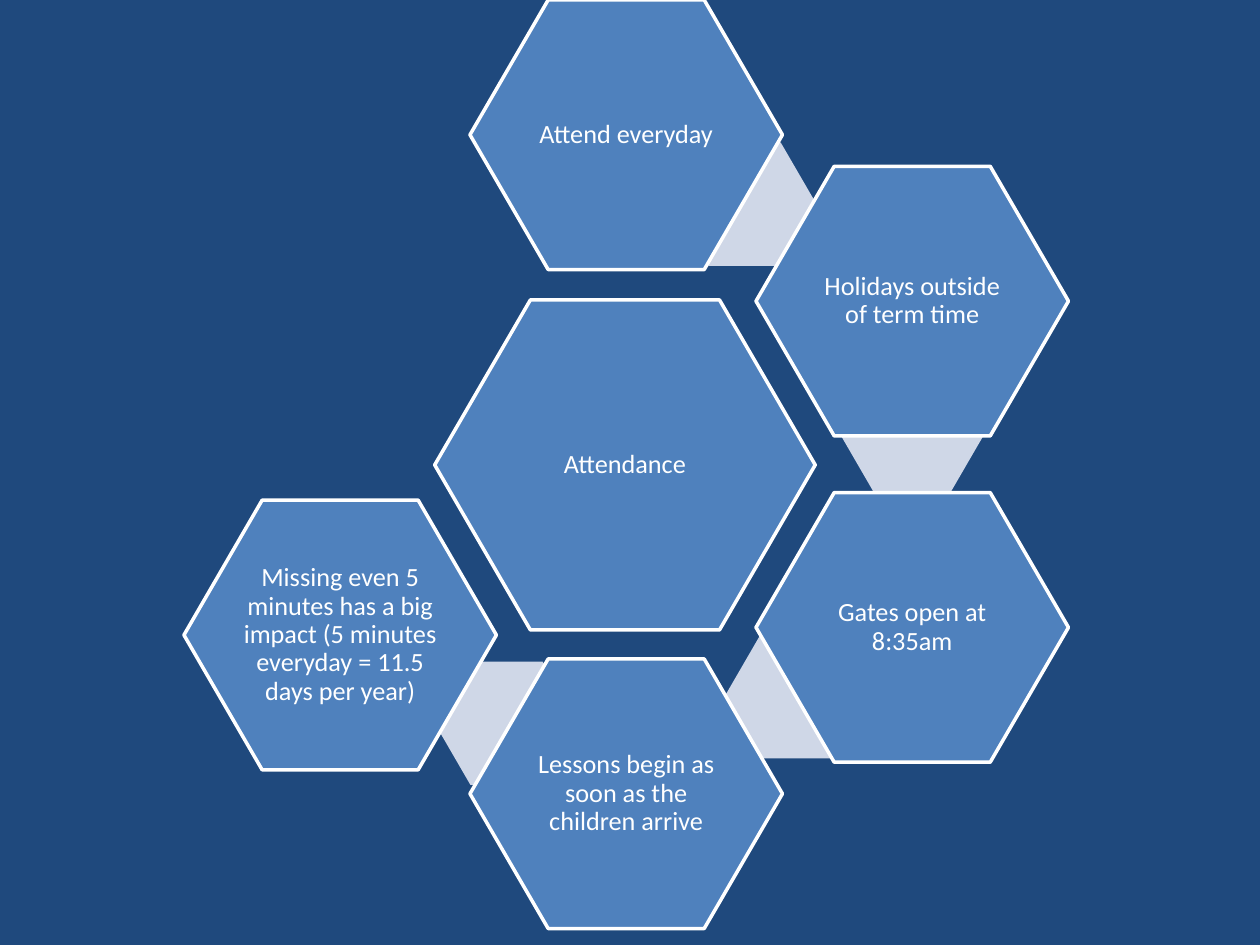
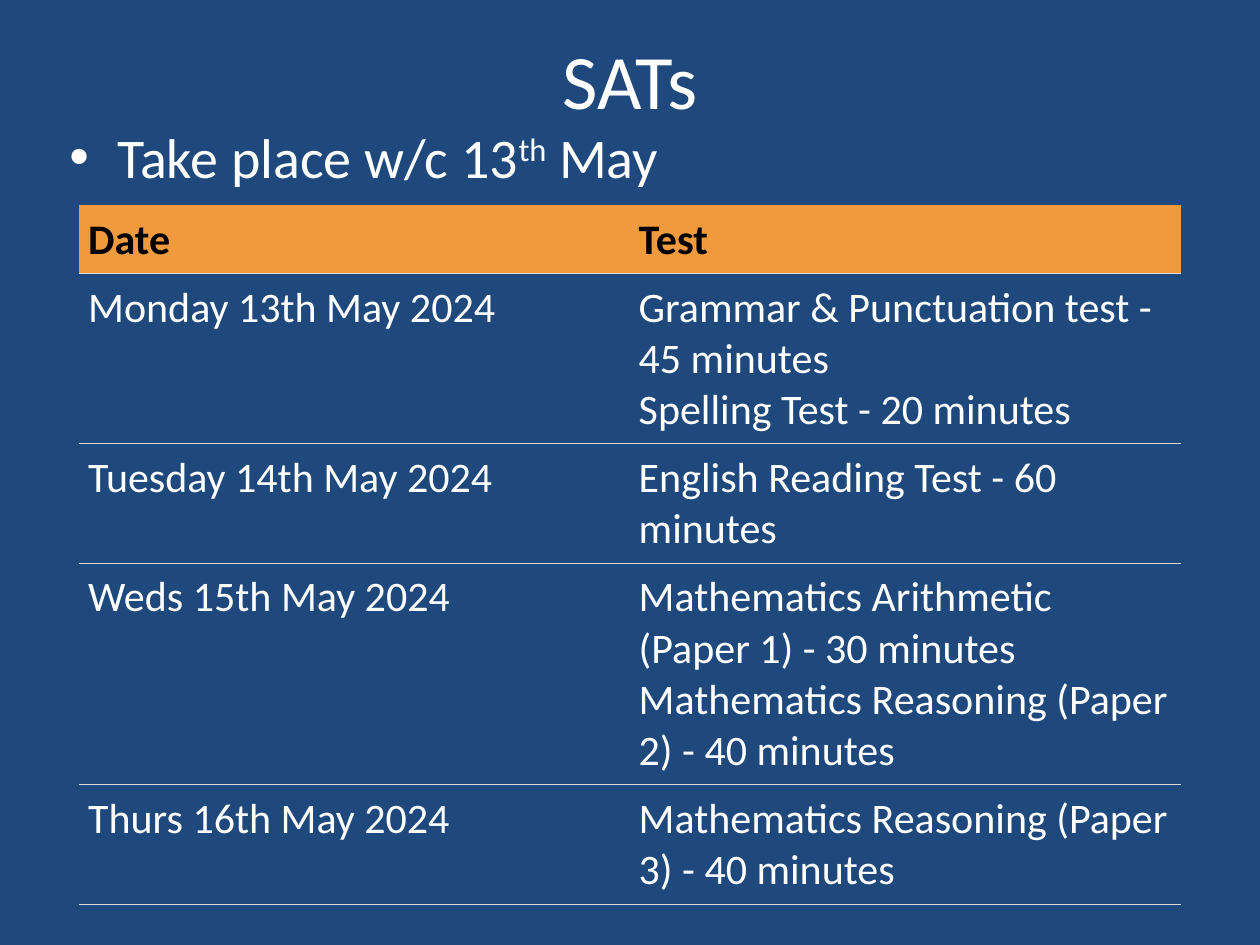
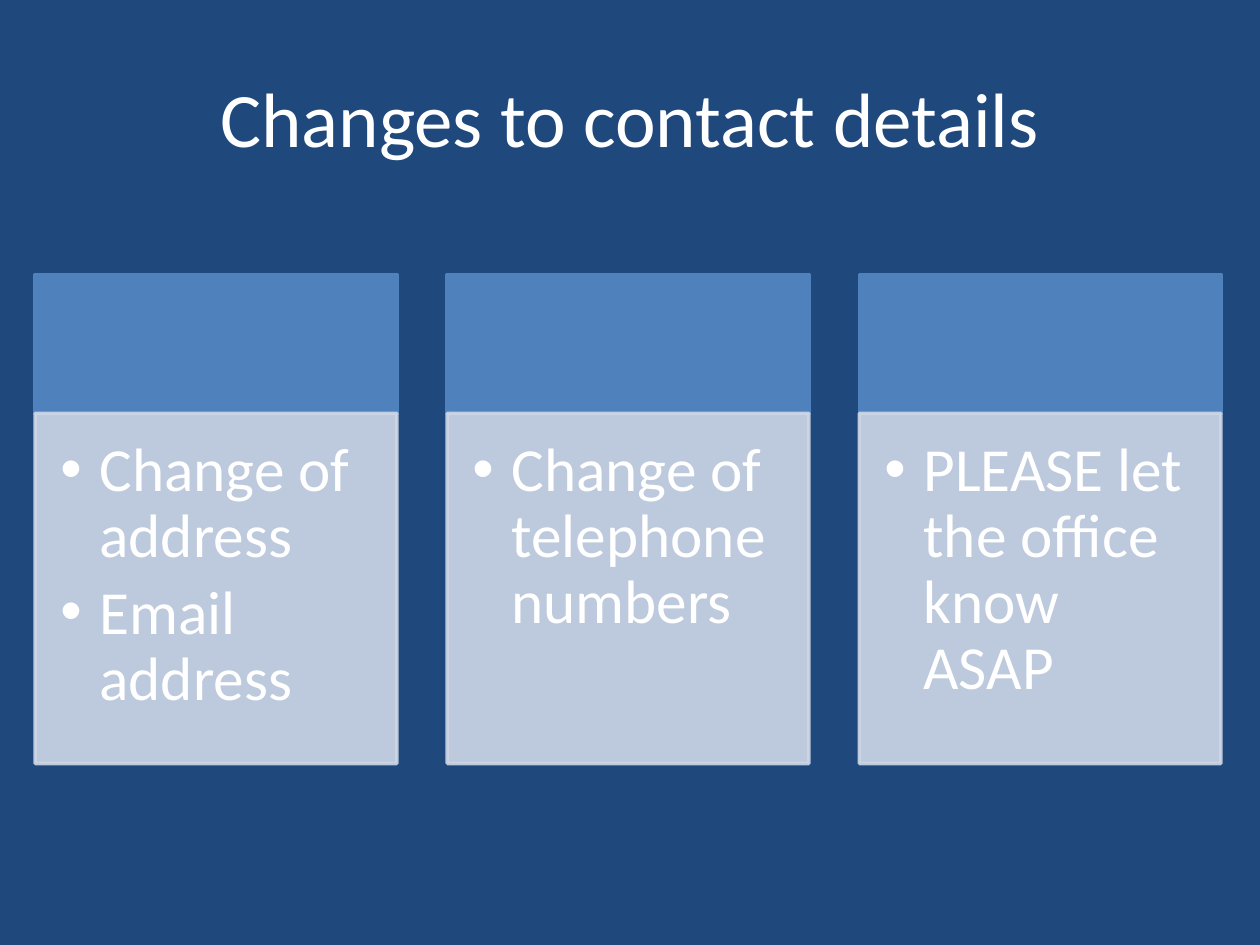
from dataclasses import dataclass
from typing import Any

from lxml.etree import SubElement
from pptx import Presentation
from pptx.dml.color import RGBColor
from pptx.enum.shapes import MSO_SHAPE
from pptx.enum.text import MSO_ANCHOR, PP_ALIGN
from pptx.oxml.ns import qn
from pptx.util import Emu, Inches, Pt

SLIDE_WIDTH = Inches(10)
SLIDE_HEIGHT = Inches(7.5)
GRID_COLUMNS = 100
GRID_ROWS = 75

NAVY = RGBColor(0x1F, 0x49, 0x7D)
BLUE = RGBColor(0x4F, 0x81, 0xBD)
PALE_BLUE = RGBColor(0xCF, 0xD7, 0xE7)
ORANGE = RGBColor(0xEF, 0x9A, 0x3D)
RULE_GREY = RGBColor(0xDD, 0xDD, 0xDD)
WHITE = RGBColor(0xFF, 0xFF, 0xFF)
BLACK = RGBColor(0, 0, 0)

FONT = "Calibri"
OUTLINE = Pt(2)
HEXAGON_INSET = 0.29
PLAIN_TABLE_STYLE = "{2D5ABB26-0587-4C30-8999-92F81FD0307C}"


@dataclass(frozen=True)
class Box:
    column: float
    row: float
    columns: float
    rows: float

    def lengths(self) -> tuple[Emu, Emu, Emu, Emu]:
        return (across(self.column), down(self.row),
                across(self.columns), down(self.rows))


@dataclass(frozen=True)
class Topic:
    label: str
    ring_column: int
    row: float


@dataclass(frozen=True)
class TestDay:
    date: str
    tests: tuple[str, ...]
    rows: float


HUB = Box(34.5, 23.8, 30.2, 26.2)
RING_LEFT, RING_STEP = 14.6, 22.7
TOPIC_COLUMNS, TOPIC_ROWS = 24.8, 21.4
LINK_COLUMNS, LINK_ROWS = 11.4, 9.8
TOPICS = (
    Topic("Attend everyday", 1, 0),
    Topic("Holidays outside of term time", 2, 13.2),
    Topic("Gates open at 8:35am", 2, 39.1),
    Topic("Lessons begin as soon as the children arrive", 1, 52.3),
    Topic("Missing even 5 minutes has a big impact "
          "(5 minutes everyday = 11.5 days per year)", 0, 39.7),
)
LINKS = ((53.4, 11.3), (66.7, 29.6), (57.5, 50.4), (34.5, 52.5))

TEST_DAYS = (
    TestDay("Date", ("Test",), 5.4),
    TestDay("Monday 13th May 2024",
            ("Grammar & Punctuation test - 45 minutes",
             "Spelling Test - 20 minutes"), 13.5),
    TestDay("Tuesday 14th May 2024",
            ("English Reading Test - 60 minutes",), 9.5),
    TestDay("Weds 15th May 2024",
            ("Mathematics Arithmetic (Paper 1) - 30 minutes",
             "Mathematics Reasoning (Paper 2) - 40 minutes"), 17.6),
    TestDay("Thurs 16th May 2024",
            ("Mathematics Reasoning (Paper 3) - 40 minutes",), 9.5),
)

CARDS = (
    ("Change of address", "Email address"),
    ("Change of telephone numbers",),
    ("PLEASE let the office know ASAP",),
)
CARD_LEFT, CARD_STEP, CARD_COLUMNS = 2.8, 32.7, 28.7
CARD_TOP, CARD_HEAD_ROWS, CARD_BODY_ROWS = 21.8, 11, 27.8

SPACED = {"line_spacing": 0.9, "space_before": Pt(6)}
CENTRED = {"alignment": PP_ALIGN.CENTER}


def across(columns: float) -> Emu:
    return Emu(round(SLIDE_WIDTH * columns / GRID_COLUMNS))


def down(rows: float) -> Emu:
    return Emu(round(SLIDE_HEIGHT * rows / GRID_ROWS))


def apply(target: Any, formats: dict[str, Any]) -> None:
    for name, value in formats.items():
        setattr(target, name, value)


def margins(inset: float) -> dict[str, Emu]:
    return {f"margin_{side}": Inches(inset)
            for side in ("left", "top", "right", "bottom")}


def add_run(paragraph: Any, text: str, size: float,
            colour: RGBColor = WHITE, bold: bool = False) -> Any:
    run = paragraph.add_run()
    run.text = text
    apply(run.font, {"name": FONT, "size": Pt(size), "bold": bold})
    run.font.color.rgb = colour
    return run


def add_bullet(paragraph: Any, indent: float) -> None:
    properties = paragraph._p.get_or_add_pPr()
    properties.set("marL", str(Inches(indent)))
    properties.set("indent", str(-Inches(indent)))
    SubElement(properties, qn("a:buFont")).set("typeface", "Arial")
    SubElement(properties, qn("a:buChar")).set("char", "•")


def add_slide(deck: Any) -> Any:
    slide = deck.slides.add_slide(deck.slide_layouts[6])
    slide.background.fill.solid()
    slide.background.fill.fore_color.rgb = NAVY
    return slide


def add_text_box(slide: Any, box: Box, anchor: MSO_ANCHOR) -> Any:
    frame = slide.shapes.add_textbox(*box.lengths()).text_frame
    apply(frame, {"word_wrap": True, "vertical_anchor": anchor, **margins(0.05)})
    return frame.paragraphs[0]


def add_title(slide: Any, text: str, row: float) -> None:
    title = add_text_box(slide, Box(5, row, 90, 12.5), MSO_ANCHOR.MIDDLE)
    apply(title, CENTRED)
    add_run(title, text, 44)


def add_block(slide: Any, preset: MSO_SHAPE, box: Box, fill: RGBColor,
              outline: RGBColor | None = None) -> Any:
    block = slide.shapes.add_shape(preset, *box.lengths())
    block.shadow.inherit = False
    block.fill.solid()
    block.fill.fore_color.rgb = fill
    if outline is None:
        block.line.fill.background()
    else:
        block.line.color.rgb = outline
        block.line.width = OUTLINE
    return block


def add_hexagon(slide: Any, box: Box, fill: RGBColor, label: str = "") -> None:
    hexagon = add_block(slide, MSO_SHAPE.HEXAGON, box, fill,
                        WHITE if label else None)
    hexagon.adjustments[0] = HEXAGON_INSET
    if label:
        frame = hexagon.text_frame
        apply(frame, {"word_wrap": True, "vertical_anchor": MSO_ANCHOR.MIDDLE,
                      **margins(0.02)})
        apply(frame.paragraphs[0], {**SPACED, **CENTRED})
        add_run(frame.paragraphs[0], label, 15)


def add_card(slide: Any, column: float, points: tuple[str, ...]) -> None:
    add_block(slide, MSO_SHAPE.RECTANGLE,
              Box(column, CARD_TOP, CARD_COLUMNS, CARD_HEAD_ROWS), BLUE, BLUE)
    body = add_block(slide, MSO_SHAPE.RECTANGLE,
                     Box(column, CARD_TOP + CARD_HEAD_ROWS, CARD_COLUMNS,
                         CARD_BODY_ROWS), PALE_BLUE, PALE_BLUE)
    for colour in body.element.spPr.iter(qn("a:srgbClr")):
        SubElement(colour, qn("a:alpha")).set("val", "90000")
    frame = body.text_frame
    apply(frame, {"word_wrap": True, "vertical_anchor": MSO_ANCHOR.TOP,
                  **margins(0.2), "margin_right": Inches(0.27)})
    for index, point in enumerate(points):
        paragraph = frame.add_paragraph() if index else frame.paragraphs[0]
        apply(paragraph, {**SPACED, "alignment": PP_ALIGN.LEFT})
        add_bullet(paragraph, 0.31)
        add_run(paragraph, point, 35)


def add_rule(cell: Any) -> None:
    properties = cell._tc.get_or_add_tcPr()
    rule = properties.makeelement(qn("a:lnB"), {"w": str(Pt(0.6))})
    fill = SubElement(rule, qn("a:solidFill"))
    SubElement(fill, qn("a:srgbClr")).set("val", str(RULE_GREY))
    properties.insert(0, rule)


def fill_cell(cell: Any, lines: tuple[str, ...], is_header: bool) -> None:
    anchor = MSO_ANCHOR.MIDDLE if is_header else MSO_ANCHOR.TOP
    apply(cell, {"vertical_anchor": anchor, **margins(0.07)})
    if is_header:
        cell.fill.solid()
        cell.fill.fore_color.rgb = ORANGE
    else:
        cell.fill.background()
    paragraph = cell.text_frame.paragraphs[0]
    for index, line in enumerate(lines):
        if index:
            paragraph.add_line_break()
        add_run(paragraph, line, 24, BLACK if is_header else WHITE, is_header)
    add_rule(cell)


def add_timetable(slide: Any) -> None:
    box = Box(6.3, 16.3, 87.4, sum(day.rows for day in TEST_DAYS))
    frame = slide.shapes.add_table(len(TEST_DAYS), 2, *box.lengths())
    table = frame.table
    apply(table, {"first_row": False, "horz_banding": False})
    for style in frame.element.iter(qn("a:tableStyleId")):
        style.text = PLAIN_TABLE_STYLE
    for index, day in enumerate(TEST_DAYS):
        table.rows[index].height = down(day.rows)
        for column, lines in enumerate(((day.date,), day.tests)):
            fill_cell(table.cell(index, column), lines, index == 0)


def build_attendance(deck: Any) -> None:
    slide = add_slide(deck)
    add_hexagon(slide, HUB, BLUE, "Attendance")
    for index, topic in enumerate(TOPICS):
        if index < len(LINKS):
            add_hexagon(slide, Box(*LINKS[index], LINK_COLUMNS, LINK_ROWS),
                        PALE_BLUE)
        column = RING_LEFT + topic.ring_column * RING_STEP
        add_hexagon(slide, Box(column, topic.row, TOPIC_COLUMNS, TOPIC_ROWS),
                    BLUE, topic.label)


def build_sats(deck: Any) -> None:
    slide = add_slide(deck)
    add_title(slide, "SATs", 0)
    week = add_text_box(slide, Box(5, 9.2, 90, 49.5), MSO_ANCHOR.TOP)
    week.space_before = Pt(7)
    add_bullet(week, 0.38)
    add_run(week, "Take place w/c 13", 32)
    ordinal = add_run(week, "th", 32)
    ordinal._r.get_or_add_rPr().set("baseline", "30000")
    add_run(week, " May", 32)
    add_timetable(slide)


def build_contact_details(deck: Any) -> None:
    slide = add_slide(deck)
    add_title(slide, "Changes to contact details", 3)
    for index, points in enumerate(CARDS):
        add_card(slide, CARD_LEFT + index * CARD_STEP, points)


def main() -> None:
    deck = Presentation()
    apply(deck, {"slide_width": SLIDE_WIDTH, "slide_height": SLIDE_HEIGHT})
    for build in (build_attendance, build_sats, build_contact_details):
        build(deck)
    deck.save("out.pptx")


if __name__ == "__main__":
    main()
